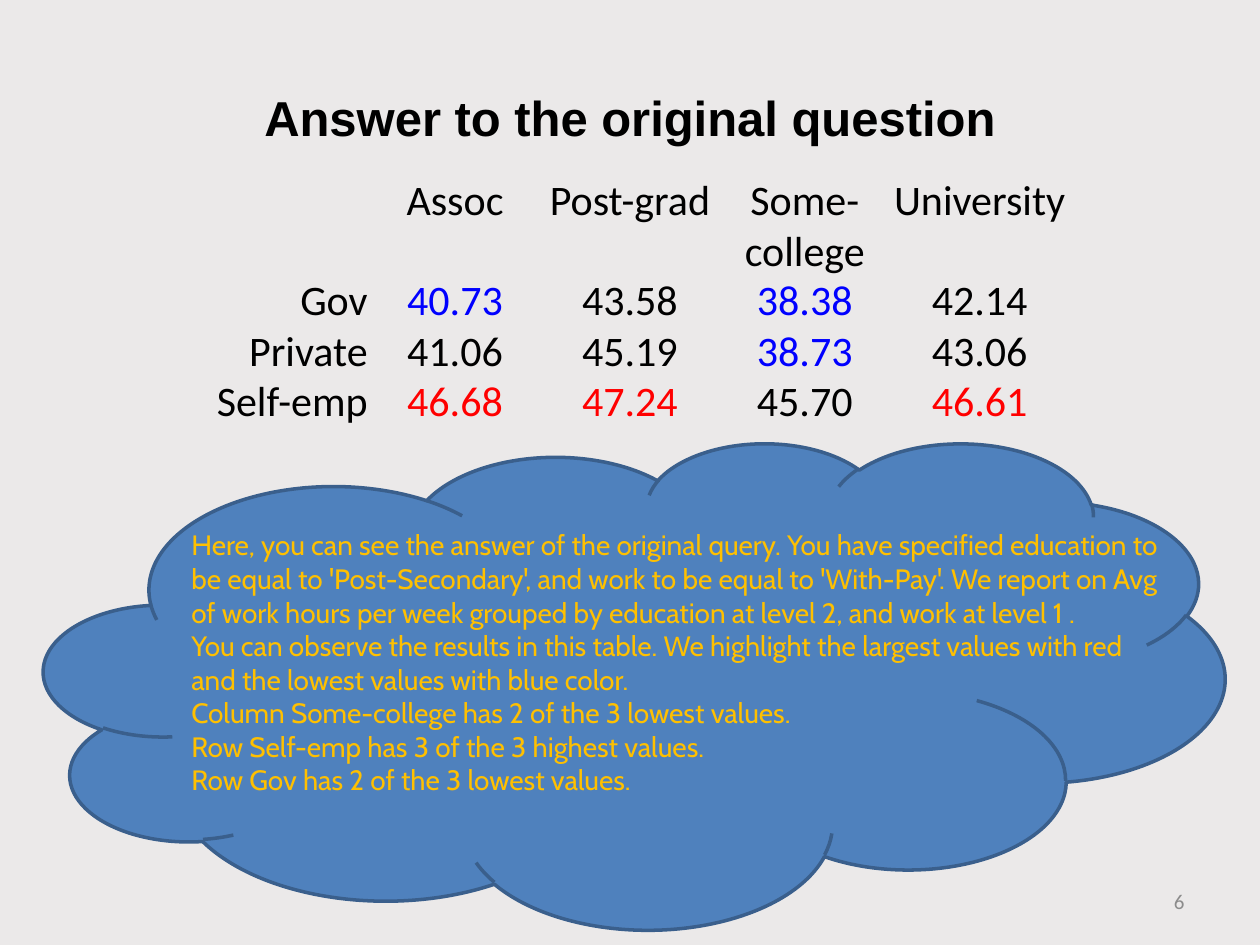
from pptx import Presentation
from pptx.dml.color import RGBColor
from pptx.enum.shapes import MSO_SHAPE as Shape
from pptx.enum.text import MSO_ANCHOR as Anchor, PP_ALIGN as Align
from pptx.oxml.ns import qn
from pptx.util import Inches, Pt

COLORS = {
    "background": "EBE9E9",
    "cloud": "4F81BD",
    "cloud_edge": "3A5F8C",
    "text": "000000",
    "lowest": "0000FF",
    "highest": "FF0000",
    "comment": "FFC000",
    "page": "8C8C8C",
}
NO_STYLE_NO_GRID = "{2D5ABB26-0587-4C30-8999-92F81FD0307C}"

LEVELS = ["Assoc", "Post-grad", "Some-college", "University"]
HOURS = {
    "Gov": ["40.73", "43.58", "38.38", "42.14"],
    "Private": ["41.06", "45.19", "38.73", "43.06"],
    "Self-emp": ["46.68", "47.24", "45.70", "46.61"],
}
COMMENT = [
    "Here, you can see the answer of the original query. You have specified "
    "education to be equal to 'Post-Secondary', and work to be equal to "
    "'With-Pay'. We report on Avg of work hours per week grouped by education "
    "at level 2, and work at level 1 .",
    "You can observe the results in this table. We highlight the largest "
    "values with red and the lowest values with blue color.",
    "Column Some-college has 2 of the 3 lowest values.",
    "Row Self-emp has 3 of the 3 highest values.",
    "Row Gov has 2 of the 3 lowest values.",
]


def rgb(name):
    return RGBColor.from_string(COLORS[name])


class SlideBuilder:
    """Holds the text style and the slide being filled."""

    body_font = "Calibri"

    def __init__(self, slide):
        self.slide = slide
        slide.background.fill.solid()
        slide.background.fill.fore_color.rgb = rgb("background")

    def add_lines(self, paragraph, lines, size, color="text", font=None,
                  bold=False, align=Align.LEFT):
        """Fill one paragraph, with a line break between the lines."""
        paragraph.alignment = align
        for index, line in enumerate(lines):
            if index:
                paragraph.add_line_break()
            run = paragraph.add_run()
            run.text = line
            run.font.name = font or self.body_font
            run.font.size = Pt(size)
            run.font.bold = bold
            run.font.color.rgb = rgb(color)

    def text(self, box, lines, size, anchor=Anchor.TOP, **style):
        frame = self.slide.shapes.add_textbox(*map(Inches, box)).text_frame
        frame.word_wrap = True
        frame.vertical_anchor = anchor
        self.add_lines(frame.paragraphs[0], lines, size, **style)

    def cloud(self, box):
        cloud = self.slide.shapes.add_shape(Shape.CLOUD, *map(Inches, box))
        cloud.shadow.inherit = False
        cloud.fill.solid()
        cloud.fill.fore_color.rgb = rgb("cloud")
        cloud.line.color.rgb = rgb("cloud_edge")
        cloud.line.width = Pt(2)

    def table(self, box, levels, hours, size):
        """Draw a plain cross table with the three extremes at each end marked."""
        rows = [["", *levels]] + [[work, *row] for work, row in hours.items()]
        ranked = sorted((v for row in hours.values() for v in row), key=float)
        marks = dict.fromkeys(ranked[:3], "lowest")
        marks.update(dict.fromkeys(ranked[-3:], "highest"))

        frame = self.slide.shapes.add_table(len(rows), len(rows[0]),
                                            *map(Inches, box))
        table = frame.table
        table.first_row = table.horz_banding = False
        frame._element.find(".//" + qn("a:tableStyleId")).text = NO_STYLE_NO_GRID
        # The header wraps to two lines, so it is twice as high.
        line_height = Inches(box[3] / (len(rows) + 1))
        for r, row in enumerate(rows):
            table.rows[r].height = line_height * (1 if r else 2)
            for c, value in enumerate(row):
                cell = table.cell(r, c)
                cell.fill.background()
                cell.margin_left = cell.margin_right = 0
                cell.margin_top = cell.margin_bottom = 0
                if value:
                    self.add_lines(cell.text_frame.paragraphs[0], [value], size,
                                   color=marks.get(value, "text"),
                                   align=Align.CENTER if c else Align.RIGHT)


def main():
    deck = Presentation()
    deck.slide_width, deck.slide_height = Inches(10), Inches(7.5)
    builder = SlideBuilder(deck.slides.add_slide(deck.slide_layouts[6]))

    builder.cloud((0.35, 3.51, 9.37, 3.86))
    builder.text((0.5, 0.3, 9, 1.25), ["Answer to the original question"], 28,
                 anchor=Anchor.MIDDLE, font="Arial", bold=True,
                 align=Align.CENTER)
    builder.table((1.53, 1.39, 6.94, 2), LEVELS, HOURS, 24)
    builder.text((7.17, 6.95, 2.33, 0.4), ["6"], 12, anchor=Anchor.MIDDLE,
                 color="page", align=Align.RIGHT)
    builder.text((1.42, 4.14, 7.99, 2.52), COMMENT, 16, color="comment",
                 font="Cabin")

    deck.save("out.pptx")


if __name__ == "__main__":
    main()
